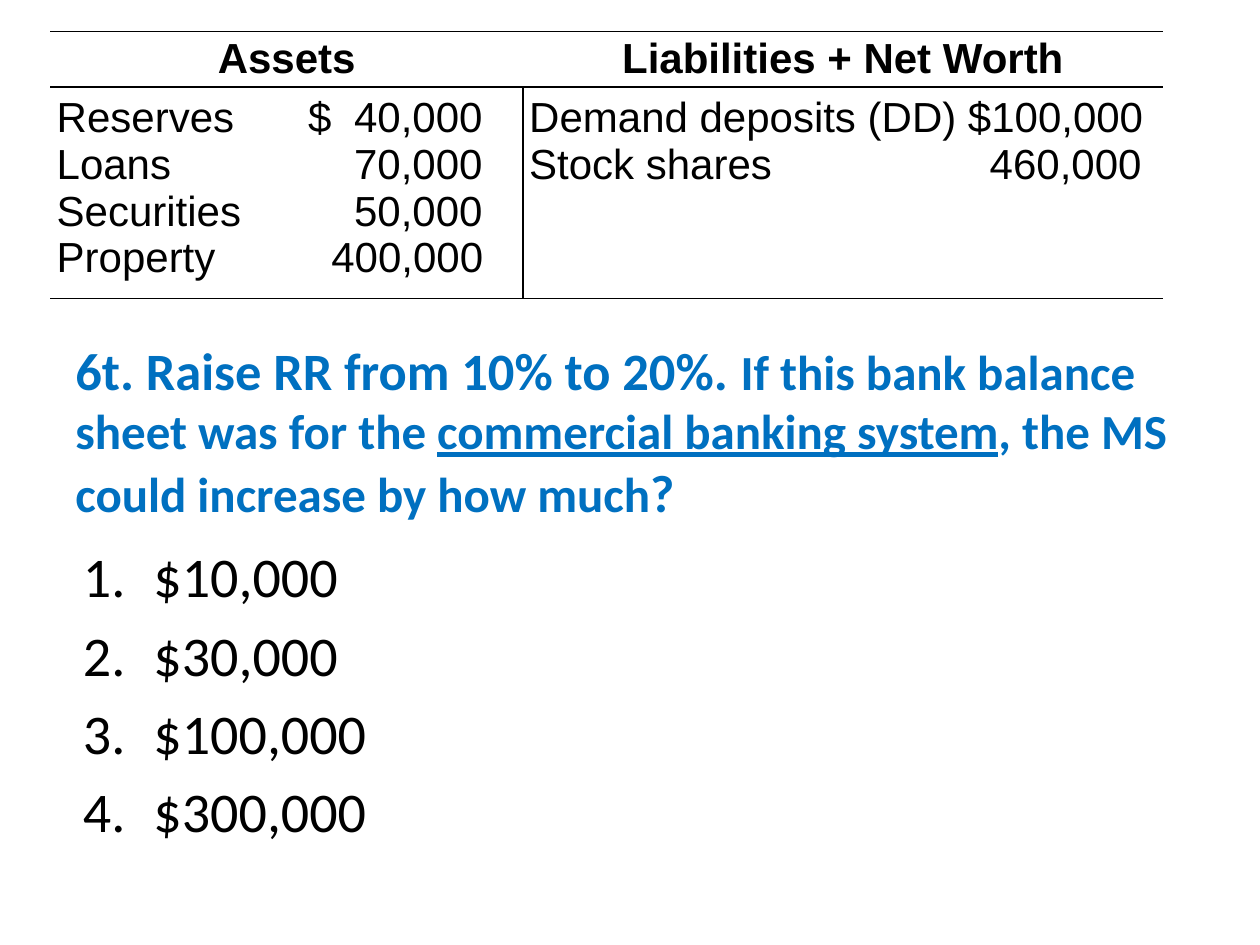
from lxml import etree
from pptx import Presentation
from pptx import util as u
from pptx.dml.color import RGBColor
from pptx.enum import text
from pptx.oxml.ns import qn

BLACK = RGBColor(0x00, 0x00, 0x00)
BLUE = RGBColor(0x00, 0x70, 0xC0)

HEADINGS = ["Assets", "Liabilities + Net Worth"]
ASSETS = [
    "Reserves\t$\t40,000",
    "Loans\t\t70,000",
    "Securities\t\t50,000",
    "Property\t\t400,000",
]
LIABILITIES = ["Demand deposits (DD) $100,000", "Stock shares\t460,000"]
ASSET_TABS = [2.18, 3.38]
LIABILITY_TABS = [4.86]
QUESTION = [
    ("6t. Raise RR from 10% to 20%. ", 30, False),
    ("If this bank balance sheet was for the ", 28, False),
    ("commercial banking system", 28, True),
    (", the MS could increase by how much", 28, False),
    ("?", 30, False),
]
ANSWERS = ["$10,000", "$30,000", "$100,000", "$300,000"]


def add_child(parent, tag, **attributes):
    return etree.SubElement(parent, qn(tag), attributes)


def set_borders(cell, sides):
    """Draw a thin black line on each side named in sides (any of L, R, T, B)."""
    properties = cell._tc.get_or_add_tcPr()
    for side in "LRTB":
        if side in sides:
            line = add_child(properties, f"a:ln{side}", w=str(u.Pt(1)))
            fill = add_child(line, "a:solidFill")
            add_child(fill, "a:srgbClr", val=str(BLACK))
        else:
            line = add_child(properties, f"a:ln{side}", w="0")
            add_child(line, "a:noFill")


def set_right_tabs(paragraph, positions):
    tabs = add_child(paragraph._p.get_or_add_pPr(), "a:tabLst")
    for position in positions:
        add_child(tabs, "a:tab", pos=str(u.Inches(position)), algn="r")


def fill_cell(cell, lines, margins, sides, bold=False, align=None, tabs=()):
    """Write the lines into a cell; margins are left, top and bottom in inches."""
    cell.margin_left, cell.margin_top, cell.margin_bottom = map(u.Inches, margins)
    cell.margin_right = 0
    set_borders(cell, sides)
    cell.fill.background()
    cell.text_frame.text = "\n".join(lines)
    for paragraph in cell.text_frame.paragraphs:
        paragraph.alignment = align
        paragraph.font.name = "Arial"
        paragraph.font.size = u.Pt(24)
        paragraph.font.bold = bold
        paragraph.font.color.rgb = BLACK
        if tabs:
            set_right_tabs(paragraph, tabs)


def add_balance_sheet(slide, left, top, width, height):
    sheet = slide.shapes.add_table(2, 2, left, top, width, height).table
    sheet.first_row = False
    sheet.horz_banding = False
    sheet.columns[0].width = u.Inches(3.75)
    sheet.columns[1].width = width - u.Inches(3.75)
    sheet.rows[0].height = u.Inches(0.38)
    sheet.rows[1].height = u.Inches(1.37)

    for column, heading in enumerate(HEADINGS):
        fill_cell(sheet.cell(0, column), [heading], (0, 0.03, 0.01), "TB",
                  bold=True, align=text.PP_ALIGN.CENTER)
    entry_margins = (0.05, 0.06, 0.02)
    fill_cell(sheet.cell(1, 0), ASSETS, entry_margins, "RTB", tabs=ASSET_TABS)
    fill_cell(sheet.cell(1, 1), LIABILITIES, entry_margins, "LTB", tabs=LIABILITY_TABS)


def add_question(slide, left, top, width, height):
    frame = slide.shapes.add_textbox(left, top, width, height).text_frame
    frame.word_wrap = True
    frame.vertical_anchor = text.MSO_ANCHOR.MIDDLE
    paragraph = frame.paragraphs[0]
    paragraph.font.name = "Calibri"
    paragraph.font.bold = True
    paragraph.font.color.rgb = BLUE
    for words, size, underlined in QUESTION:
        run = paragraph.add_run()
        run.text = words
        run.font.size = u.Pt(size)
        if underlined:
            run.font.underline = True


def add_answers(slide, left, top, width, height):
    frame = slide.shapes.add_textbox(left, top, width, height).text_frame
    frame.word_wrap = True
    frame.text = "\n".join(ANSWERS)
    indent = u.Inches(0.56)
    for paragraph in frame.paragraphs:
        properties = paragraph._p.get_or_add_pPr()
        properties.set("marL", str(indent))
        properties.set("indent", str(-indent))
        spacing = add_child(properties, "a:spcBef")
        add_child(spacing, "a:spcPct", val="20000")
        add_child(properties, "a:buFont", typeface="+mj-lt")
        add_child(properties, "a:buAutoNum", type="arabicPeriod")
        paragraph.font.name = "Calibri"
        paragraph.font.size = u.Pt(32)
        paragraph.font.color.rgb = BLACK


def main():
    presentation = Presentation()
    presentation.slide_width = u.Inches(10)
    presentation.slide_height = u.Inches(7.5)
    slide = presentation.slides.add_slide(presentation.slide_layouts[6])
    add_question(slide, u.Inches(0.5), u.Inches(2.58), u.Inches(9), u.Inches(1.67))
    add_balance_sheet(slide, u.Inches(0.4), u.Inches(0.25), u.Inches(8.83), u.Inches(1.75))
    add_answers(slide, u.Inches(0.56), u.Inches(4.25), u.Inches(5.92), u.Inches(2.5))
    presentation.save("out.pptx")


if __name__ == "__main__":
    main()
